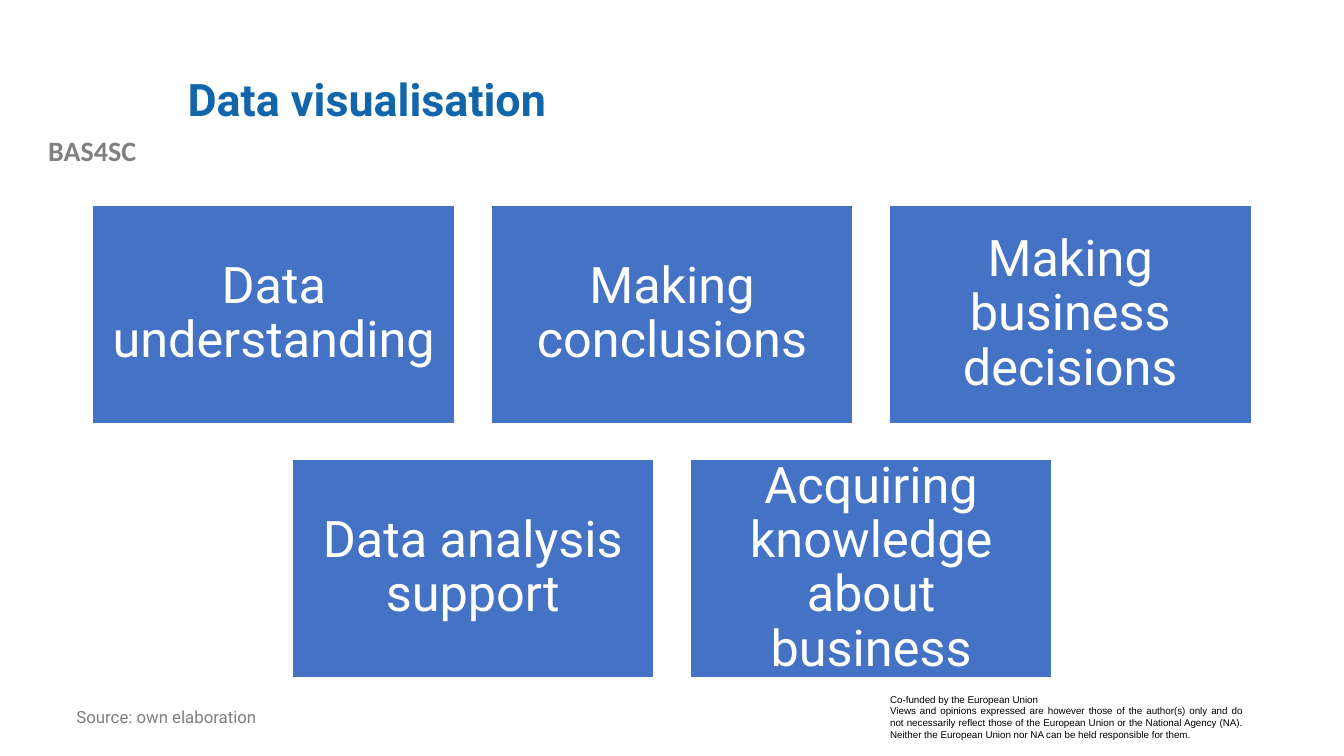
from pptx import Presentation
from pptx.dml.color import RGBColor
from pptx.enum import shapes, text
from pptx.util import Inches, Pt


def color(hex_value):
    return RGBColor.from_string(hex_value)


def write(frame, lines, font, anchor=text.MSO_ANCHOR.TOP, inset=None, **layout):
    """Fill a text frame; layout holds paragraph settings."""
    frame.word_wrap = True
    frame.vertical_anchor = anchor
    if inset is not None:
        for side in ("left", "top", "right", "bottom"):
            setattr(frame, f"margin_{side}", Inches(inset))
    frame.text = "\n".join(lines)
    for paragraph in frame.paragraphs:
        for key, value in layout.items():
            setattr(paragraph, key, value)
        for key, value in font.items():
            if key == "color":
                paragraph.font.color.rgb = color(value)
            else:
                setattr(paragraph.font, key, value)


prs = Presentation()
prs.slide_width, prs.slide_height = Inches(13.33), Inches(7.5)
slide = prs.slides.add_slide(prs.slide_layouts[5])
align = text.PP_ALIGN
middle = text.MSO_ANCHOR.MIDDLE

# Title
title = slide.shapes.title
title.left, title.top = Inches(1.76), Inches(0.4)
title.width, title.height = Inches(10.66), Inches(1.22)
write(title.text_frame, ["Data visualisation"],
      {"name": "Roboto", "size": Pt(32), "bold": True, "color": "1065AB"},
      anchor=middle, alignment=align.LEFT, line_spacing=0.9)

# Project name
project = slide.shapes.add_textbox(Inches(0), Inches(1.28), Inches(1.83), Inches(0.44))
write(project.text_frame, ["BAS4SC"],
      {"name": "Calibri", "size": Pt(20), "bold": True, "color": "808080"},
      alignment=align.CENTER)

# Benefits: rows of cards, each row centred on the same axis
benefit_rows = [
    ["Data understanding", "Making conclusions", "Making business decisions"],
    ["Data analysis support", "Acquiring knowledge about business"],
]
card_width, card_height, gap = 3.59, 2.16, 0.36
axis, first_top = 6.665, 2.04
for row, benefits in enumerate(benefit_rows):
    row_width = len(benefits) * (card_width + gap) - gap
    for column, benefit in enumerate(benefits):
        left = axis - row_width / 2 + column * (card_width + gap)
        top = first_top + row * (card_height + gap)
        card = slide.shapes.add_shape(
            shapes.MSO_SHAPE.RECTANGLE, Inches(left), Inches(top),
            Inches(card_width), Inches(card_height))
        card.shadow.inherit = False
        card.fill.solid()
        card.fill.fore_color.rgb = color("4472C4")
        card.line.color.rgb = color("FFFFFF")
        card.line.width = Pt(1)
        write(card.text_frame, [benefit],
              {"name": "Roboto", "size": Pt(36), "color": "FFFFFF"},
              anchor=middle, inset=0.15, alignment=align.CENTER, line_spacing=0.9)

# Source
source = slide.shapes.add_textbox(Inches(0.66), Inches(6.98), Inches(5.01), Inches(0.37))
write(source.text_frame, ["Source: own elaboration"],
      {"name": "Roboto", "size": Pt(12), "color": "7F7F7F"}, line_spacing=0.9)

# Funding disclaimer
disclaimer = slide.shapes.add_textbox(Inches(8.73), Inches(6.83), Inches(3.69), Inches(0.57))
disclaimer.fill.solid()
disclaimer.fill.fore_color.rgb = color("FFFFFF")
write(disclaimer.text_frame,
      ["Co-funded by the European Union",
       "Views and opinions expressed are however those of the author(s) only and do "
       "not necessarily reflect those of the European Union or the National Agency "
       "(NA). Neither the European Union nor NA can be held responsible for them."],
      {"name": "Arial", "size": Pt(7), "color": "000000"}, alignment=align.JUSTIFY)

prs.save("out.pptx")
